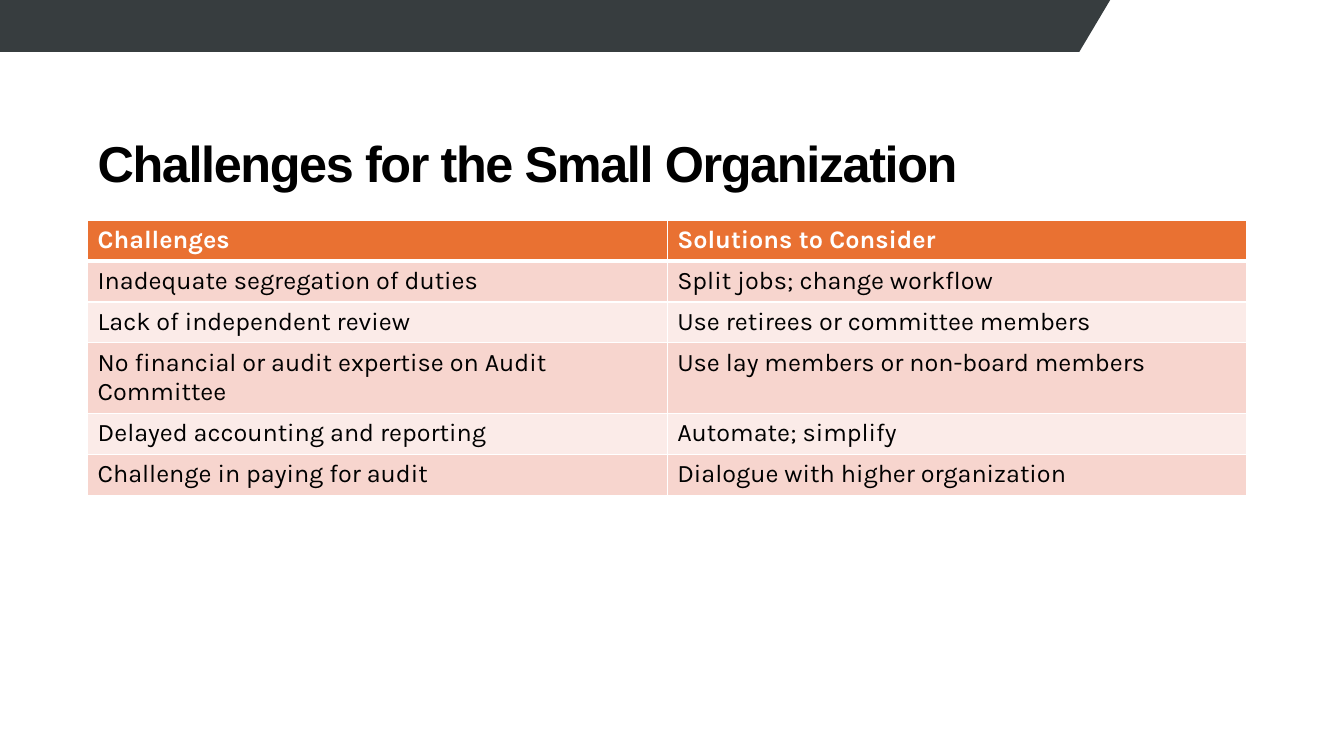
from lxml.etree import SubElement
from pptx import Presentation
from pptx.dml.color import RGBColor
from pptx.enum.text import MSO_ANCHOR, PP_ALIGN
from pptx.oxml.ns import qn
from pptx.util import Pt

TITLE = "Challenges for the Small Organization"
ROWS = [
    ("Challenges", "Solutions to Consider"),
    ("Inadequate segregation of duties", "Split jobs; change workflow"),
    ("Lack of independent review", "Use retirees or committee members"),
    ("No financial or audit expertise on Audit Committee",
     "Use lay members or non-board members"),
    ("Delayed accounting and reporting", "Automate; simplify"),
    ("Challenge in paying for audit", "Dialogue with higher organization"),
]
COLORS = {
    "banner": "373D3F",
    "black": "000000",
    "white": "FFFFFF",
    "header": "E97132",
    "odd": "F7D5CE",
    "even": "FBEBE8",
}
BANNER_POINTS = [(0, 0), (792.8, 0), (771.2, 37.4), (0, 37.4)]
LEFT = 62.6
TABLE_TOP, TABLE_WIDTH, ROW_HEIGHT = 157.3, 828, 29.2
THIN, THICK = 1, 3


def color(name):
    return RGBColor.from_string(COLORS[name])


def format_font(font, color_name, **values):
    font.color.rgb = color(color_name)
    for name, value in values.items():
        setattr(font, name, value)


def add_banner(page):
    builder = page.shapes.build_freeform(scale=Pt(1))
    start, *others = BANNER_POINTS
    builder = page.shapes.build_freeform(*start, scale=Pt(1))
    builder.add_line_segments(others, close=True)
    banner = builder.convert_to_shape()
    banner.shadow.inherit = False
    banner.fill.solid()
    banner.fill.fore_color.rgb = color("banner")
    banner.line.fill.background()


def add_title(page):
    box = page.shapes.add_textbox(Pt(LEFT), Pt(53.3), Pt(705), Pt(88.5))
    frame = box.text_frame
    frame.word_wrap = True
    frame.vertical_anchor = MSO_ANCHOR.BOTTOM
    para = frame.paragraphs[0]
    para.line_spacing = 0.9
    span = para.add_run()
    span.text = TITLE
    format_font(span.font, "black", name="Arial", size=Pt(36), bold=True)
    span.font._element.set("spc", "-100")


def add_borders(cell, widths):
    """Draw white cell edges; widths maps L, R, T, B to points, in that order."""
    properties = cell._tc.get_or_add_tcPr()
    for side, width in widths.items():
        edge = SubElement(properties, qn(f"a:ln{side}"), w=str(Pt(width)))
        fill = SubElement(edge, qn("a:solidFill"))
        SubElement(fill, qn("a:srgbClr"), val=COLORS["white"])


def add_table(page):
    frame = page.shapes.add_table(
        len(ROWS), len(ROWS[0]), Pt(LEFT), Pt(TABLE_TOP),
        Pt(TABLE_WIDTH), Pt(ROW_HEIGHT * len(ROWS)))
    table = frame.table
    for row_index, texts in enumerate(ROWS):
        table.rows[row_index].height = Pt(ROW_HEIGHT)
        is_header = row_index == 0
        fill_name = "header" if is_header else ("even", "odd")[row_index % 2]
        widths = {
            "L": THIN,
            "R": THIN,
            "T": THICK if row_index == 1 else THIN,
            "B": THICK if is_header else THIN,
        }
        for column_index, text in enumerate(texts):
            cell = table.cell(row_index, column_index)
            add_borders(cell, widths)
            cell.fill.solid()
            cell.fill.fore_color.rgb = color(fill_name)
            para = cell.text_frame.paragraphs[0]
            para.alignment = PP_ALIGN.LEFT
            span = para.add_run()
            span.text = text
            format_font(span.font, "white" if is_header else "black",
                        name="Karla", size=Pt(18), bold=is_header)


def main():
    deck = Presentation()
    deck.slide_width, deck.slide_height = Pt(960), Pt(540)
    page = deck.slides.add_slide(deck.slide_layouts[6])
    add_banner(page)
    add_title(page)
    add_table(page)
    deck.save("out.pptx")


if __name__ == "__main__":
    main()
